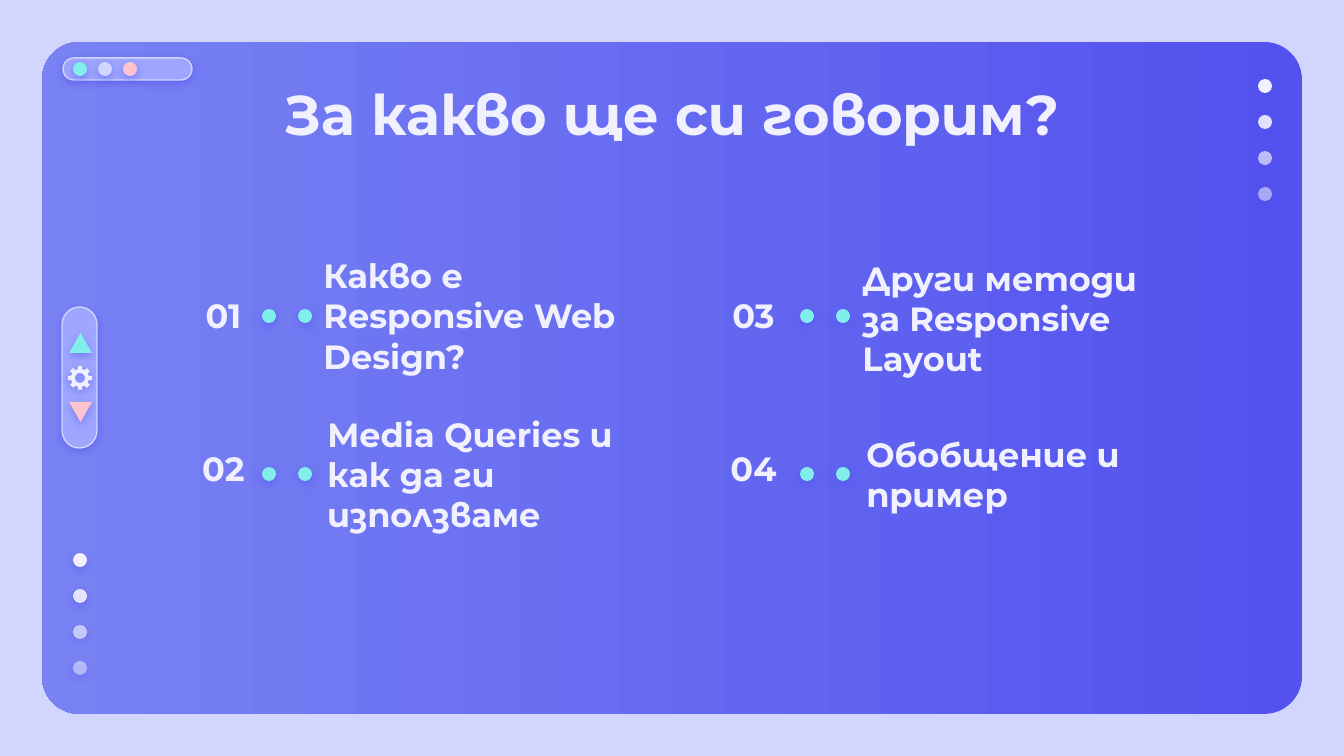
import math
import pptx
import pptx.util
import pptx.dml.color
import pptx.enum.lang
import pptx.enum.shapes
import pptx.enum.text
import pptx.oxml.ns
import lxml.etree

HUE = {"back": "D2D6FF", "deep": "5352EE", "soft": "7882F3", "pill": "9EA6FF",
       "mint": "81EEEB", "pink": "FFC3D0", "pale": "F1F0FF"}
RGB = {name: pptx.dml.color.RGBColor.from_string(code) for name, code in HUE.items()}
PX = 914400 / 134.4
KIND = pptx.enum.shapes.MSO_SHAPE
ALIGN = pptx.enum.text.PP_ALIGN
ANCHOR = pptx.enum.text.MSO_ANCHOR
qn = pptx.oxml.ns.qn


def paint(shape, hue, alpha=100, edge=False):
    shape.fill.solid()
    shape.fill.fore_color.rgb = RGB[hue]
    if alpha < 100:
        tint = shape._element.spPr.find(qn("a:solidFill"))[0]
        lxml.etree.SubElement(tint, qn("a:alpha"), val=str(alpha * 1000))
    if edge:
        shape.line.color.rgb = RGB["back"]
        shape.line.width = pptx.util.Pt(0.75)
    else:
        shape.line.fill.background()
    shape.shadow.inherit = False
    glow = lxml.etree.SubElement(
        shape._element.spPr.find(qn("a:effectLst")), qn("a:outerShdw"),
        blurRad="57150", dist="19050", dir="5400000", algn="bl", rotWithShape="0")
    tint = lxml.etree.SubElement(glow, qn("a:srgbClr"), val=HUE["deep"])
    lxml.etree.SubElement(tint, qn("a:alpha"), val="50000")


def write(box, text, rect, size, align, anchor):
    box.left, box.top, box.width, box.height = [round(n * PX) for n in rect]
    frame = box.text_frame
    frame.text = text
    frame.word_wrap = True
    frame.auto_size = pptx.enum.text.MSO_AUTO_SIZE.NONE
    frame.vertical_anchor = anchor
    frame.margin_left = frame.margin_right = pptx.util.Inches(0.1)
    frame.margin_top = frame.margin_bottom = pptx.util.Inches(0.1)
    para = frame.paragraphs[0]
    para.alignment = align
    para.space_before = pptx.util.Pt(0)
    props = para._p.get_or_add_pPr()
    props.set("marL", "0")
    props.set("indent", "0")
    lxml.etree.SubElement(props, qn("a:buNone"))
    font = para.runs[0].font
    font.name = "Montserrat"
    font.size = pptx.util.Pt(size)
    font.bold = True
    font.color.rgb = RGB["pale"]
    font.language_id = pptx.enum.lang.MSO_LANGUAGE_ID.BULGARIAN


deck = pptx.Presentation()
deck.slide_width = round(1344 * PX)
deck.slide_height = round(756 * PX)
slide = deck.slides.add_slide(deck.slide_layouts[4])
slide.background.fill.solid()
slide.background.fill.fore_color.rgb = RGB["back"]
shapes = slide.shapes

panel = shapes.add_shape(KIND.ROUNDED_RECTANGLE, *[round(n * PX) for n in (42, 42, 1260, 672)])
panel.adjustments[0] = 0.056
panel.fill.gradient()
panel.fill.gradient_angle = 180
for stop, hue in zip(panel.fill.gradient_stops, ("deep", "soft")):
    stop.color.rgb = RGB[hue]
panel.line.fill.background()
panel.shadow.inherit = False
shapes._spTree.insert(2, panel._element)

write(shapes.title, "За какво ще си говорим?", (106, 66, 1133, 85), 30,
      ALIGN.CENTER, ANCHOR.TOP)

items = [
    ("01", "Какво е Responsive Web Design?", (310, 245, 339, 141)),
    ("02", "Media Queries и как да ги използваме", (314, 456, 339, 36)),
    ("03", "Други методи за Responsive Layout", (849, 223, 339, 190)),
    ("04", "Обобщение и пример", (853, 456, 339, 36)),
]
dots = []
for i, (num, text, rect) in enumerate(items):
    col, row = divmod(i, 2)
    write(slide.placeholders[i + 1], text, rect, 18, ALIGN.LEFT, ANCHOR.MIDDLE)
    write(shapes.add_textbox(0, 0, 0, 0), num, (159 + 530 * col, 297 + 153 * row, 129, 36),
          18, ALIGN.CENTER, ANCHOR.MIDDLE)
    for k in range(2):
        dots.append((262 + 538 * col + 36 * k, 309 + 158 * row, "mint", 100))

for i, hue in enumerate(("mint", "back", "pink")):
    dots.append((73 + 25 * i, 62, hue, 100))
for left, top in ((1258, 79), (73, 553)):
    for i, alpha in enumerate((100, 90, 67, 54)):
        dots.append((left, top + 36 * i, "pale", alpha))

for rect in ((63, 58, 129, 22), (62, 307, 35, 141)):
    pill = shapes.add_shape(KIND.ROUNDED_RECTANGLE, *[round(n * PX) for n in rect])
    pill.adjustments[0] = 0.5
    paint(pill, "pill", edge=True)

for left, top, hue, alpha in dots:
    dot = shapes.add_shape(KIND.OVAL, *[round(n * PX) for n in (left, top, 14, 14)])
    paint(dot, hue, alpha)

for top, turn, hue in ((333, 0, "mint"), (402, 180, "pink")):
    arrow = shapes.add_shape(KIND.ISOSCELES_TRIANGLE,
                             *[round(n * PX) for n in (69, top, 23, 20)])
    arrow.rotation = turn
    paint(arrow, hue)

teeth = []
for i in range(8):
    for reach, shift in ((9, -0.23), (12, -0.18), (12, 0.18), (9, 0.23)):
        teeth.append((reach, i * math.pi / 4 + shift))
hole = [(5, -i * math.pi / 16) for i in range(32)]
rims = [[(round((80 + r * math.cos(a)) * PX), round((378 + r * math.sin(a)) * PX))
         for r, a in rim] for rim in (teeth, hole)]
draft = shapes.build_freeform(*rims[0][0])
draft.add_line_segments(rims[0][1:])
draft.move_to(*rims[1][0])
draft.add_line_segments(rims[1][1:])
paint(draft.convert_to_shape(), "pale")

deck.save("out.pptx")
